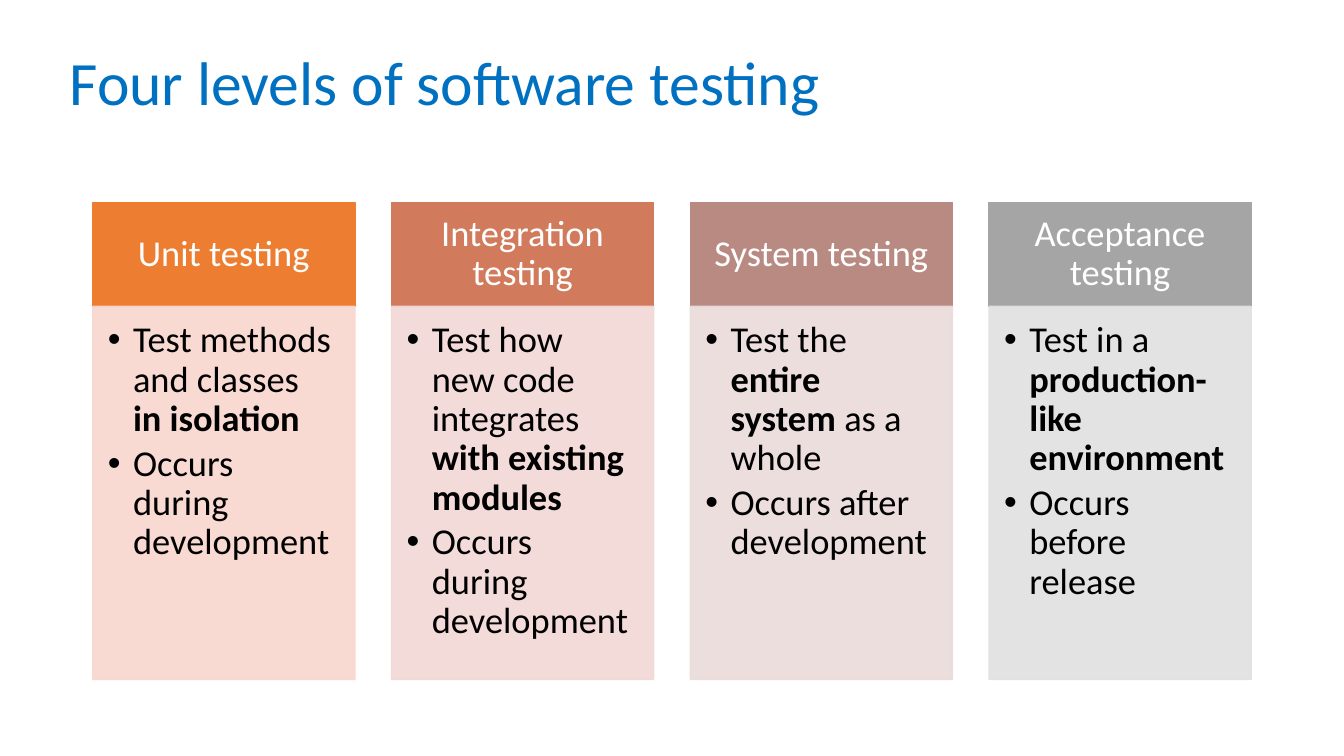
"""Build a slide that compares the four levels of software testing."""
from dataclasses import dataclass

from lxml.etree import SubElement
from pptx import Presentation
from pptx.dml.color import RGBColor
from pptx.enum.shapes import MSO_SHAPE
from pptx.enum.text import MSO_ANCHOR, MSO_AUTO_SIZE, PP_ALIGN
from pptx.oxml.ns import qn
from pptx.util import Inches, Pt

LEFT, LAST_LEFT, WIDTH = 0.92, 9.81, 2.6
HEAD_TOP, HEAD_HEIGHT = 2.01, 1.03
BODY_TOP, BODY_HEIGHT = 3.04, 3.7
HEAD_INSETS = (0.2, 0.12, 0.2, 0.12)
BODY_INSETS = (0.15, 0.15, 0.2, 0.23)


@dataclass(frozen=True)
class Run:
    """A stretch of text, bold or plain."""
    text: str
    bold: bool = False


@dataclass(frozen=True)
class Level:
    """One testing level with its colours and bullet points."""
    name: str
    head_color: str
    body_color: str
    bullets: list[list[Run]]


LEVELS = [
    Level("Unit testing", "ED7D31", "F8D7CE", [
        [Run("Test methods and classes "), Run("in isolation", True)],
        [Run("Occurs during development")]]),
    Level("Integration testing", "D17B5C", "F1D8D4", [
        [Run("Test how new code integrates "), Run("with existing modules", True)],
        [Run("Occurs during development")]]),
    Level("System testing", "B98A82", "E9DBDA", [
        [Run("Test the "), Run("entire system ", True), Run("as a whole")],
        [Run("Occurs after development")]]),
    Level("Acceptance testing", "A5A5A5", "E1E1E1", [
        [Run("Test in a "), Run("production-like environment", True)],
        [Run("Occurs before release")]]),
]


def set_all(target, values: dict) -> None:
    """Set each named attribute on the target."""
    for name, value in values.items():
        setattr(target, name, value)


def rgb(color: str) -> RGBColor:
    """Turn a hex string into a colour."""
    return RGBColor.from_string(color)


def write(p, runs: list[Run], size: int, color: str, **paragraph) -> None:
    """Fill a paragraph with formatted runs."""
    set_all(p, {"line_spacing": 0.9, **paragraph})
    for run in runs:
        r = p.add_run()
        r.text = run.text
        set_all(r.font, {"name": "Calibri", "size": Pt(size), "bold": run.bold})
        r.font.color.rgb = rgb(color)


def add_bullet(p) -> None:
    """Give a paragraph a hanging round bullet."""
    p_pr = p._p.get_or_add_pPr()
    p_pr.set("marL", str(Inches(0.25)))
    p_pr.set("indent", str(Inches(-0.25)))
    SubElement(p_pr, qn("a:buFont"), typeface="Arial")
    SubElement(p_pr, qn("a:buChar"), char="•")


def add_box(slide, left: float, top: float, height: float, color: str,
            insets: tuple, anchor: MSO_ANCHOR, opacity: int = 100):
    """Draw a filled box and return its text frame."""
    s = slide.shapes.add_shape(MSO_SHAPE.RECTANGLE, Inches(left), Inches(top),
                               Inches(WIDTH), Inches(height))
    s.shadow.inherit = False
    s.fill.solid()
    s.fill.fore_color.rgb = rgb(color)
    s.line.color.rgb = rgb(color)
    s.line.width = Pt(1)
    if opacity < 100:
        for element in s._element.spPr.iter(qn("a:srgbClr")):
            SubElement(element, qn("a:alpha"), val=str(opacity * 1000))
    tf = s.text_frame
    sides = ("margin_left", "margin_top", "margin_right", "margin_bottom")
    set_all(tf, dict(zip(sides, map(Inches, insets))))
    set_all(tf, {"word_wrap": True, "vertical_anchor": anchor})
    return tf


def add_title(slide, text: str) -> None:
    """Place and format the slide title."""
    title = slide.shapes.title
    set_all(title, {"left": Inches(0.59), "top": Inches(0.4),
                    "width": Inches(11.83), "height": Inches(0.89)})
    tf = title.text_frame
    set_all(tf, {"vertical_anchor": MSO_ANCHOR.MIDDLE, "word_wrap": True,
                 "auto_size": MSO_AUTO_SIZE.NONE})
    write(tf.paragraphs[0], [Run(text)], 44, "0070C0", alignment=PP_ALIGN.LEFT)


def add_level(slide, level: Level, left: float) -> None:
    """Draw one column: a heading box above a bullet box."""
    head = add_box(slide, left, HEAD_TOP, HEAD_HEIGHT, level.head_color,
                   HEAD_INSETS, MSO_ANCHOR.MIDDLE)
    write(head.paragraphs[0], [Run(level.name)], 26, "FFFFFF",
          alignment=PP_ALIGN.CENTER)
    body = add_box(slide, left, BODY_TOP, BODY_HEIGHT, level.body_color,
                   BODY_INSETS, MSO_ANCHOR.TOP, opacity=90)
    for i, runs in enumerate(level.bullets):
        p = body.add_paragraph() if i else body.paragraphs[0]
        write(p, runs, 26, "000000", alignment=PP_ALIGN.LEFT,
              level=1, space_after=Pt(4))
        add_bullet(p)


def main() -> None:
    """Build and save the presentation."""
    prs = Presentation()
    set_all(prs, {"slide_width": Inches(13.33), "slide_height": Inches(7.5)})
    slide = prs.slides.add_slide(prs.slide_layouts[5])
    add_title(slide, "Four levels of software testing")
    pitch = (LAST_LEFT - LEFT) / (len(LEVELS) - 1)
    for i, level in enumerate(LEVELS):
        add_level(slide, level, LEFT + i * pitch)
    prs.save("out.pptx")


if __name__ == "__main__":
    main()
